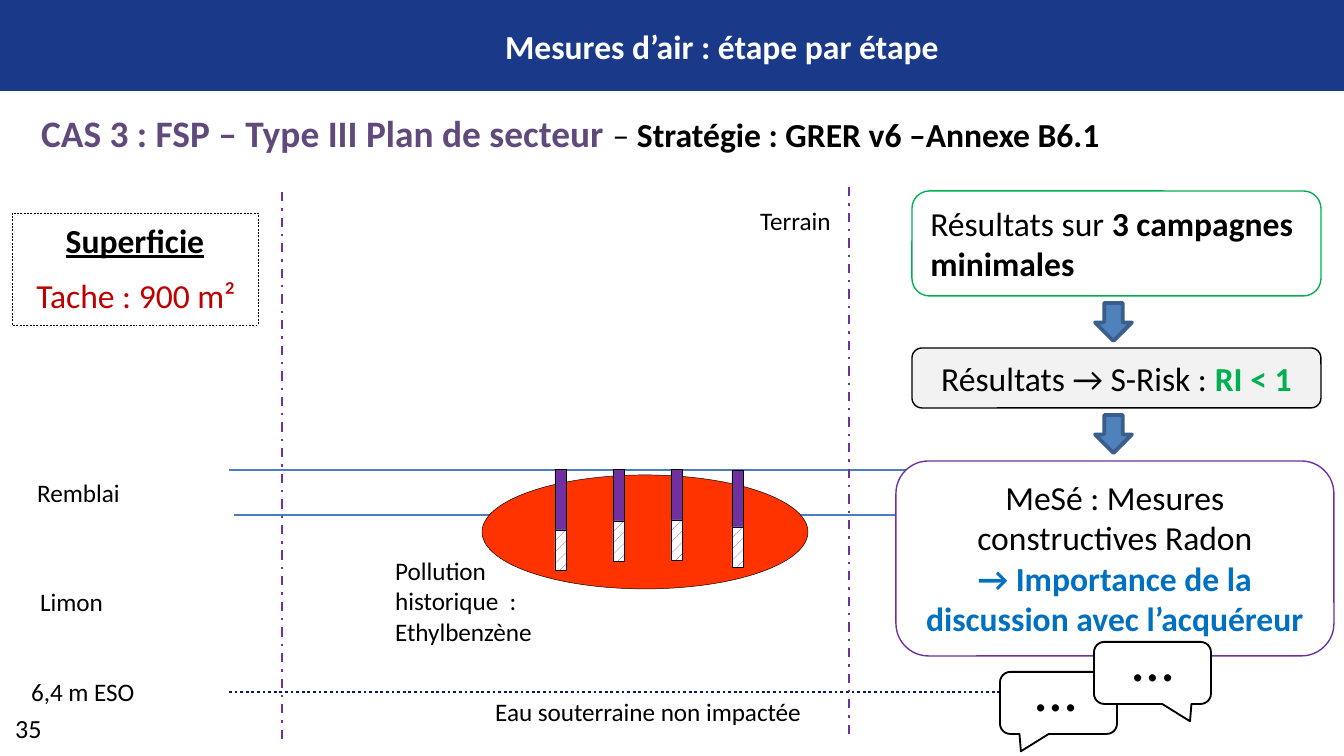
"""Build the air-measurement slide: site section on the left, decision flow on the right."""
import dataclasses

import lxml.etree
import pptx
import pptx.dml.color
import pptx.enum.dml
import pptx.enum.shapes
import pptx.enum.text
import pptx.oxml.ns
import pptx.util

SHAPE = pptx.enum.shapes.MSO_SHAPE
DASH = pptx.enum.dml.MSO_LINE
ALIGN = pptx.enum.text.PP_ALIGN
ANCHOR = pptx.enum.text.MSO_ANCHOR


@dataclasses.dataclass(frozen=True)
class Theme:
    font: str = "Calibri"
    black: str = "000000"
    white: str = "FFFFFF"
    grey: str = "F2F2F2"
    banner: str = "1A3989"
    heading: str = "604A7B"
    purple: str = "7030A0"
    layer: str = "4B7EBC"
    water: str = "002060"
    plume: str = "FF3300"
    green: str = "00B050"
    blue: str = "0070C0"
    red: str = "C00000"
    arrow: str = "4F81BD"
    arrow_edge: str = "3A5F8C"
    label: float = 13.5
    number: float = 14
    body: float = 18
    large: float = 20
    dots: float = 32


THEME = Theme()


@dataclasses.dataclass(frozen=True)
class Span:
    text: str
    color: str = THEME.black
    size: float = THEME.body
    bold: bool = False
    underline: bool = False


class SlideBuilder:
    def __init__(self, deck, theme, scale):
        self.theme = theme
        self.scale = scale
        self.page = deck.slides.add_slide(deck.slide_layouts[5])

    def emu(self, *lengths):
        return [pptx.util.Emu(round(length * self.scale)) for length in lengths]

    def rgb(self, color):
        return pptx.dml.color.RGBColor.from_string(color)

    def style(self, font, span):
        font.name = self.theme.font
        font.size = pptx.util.Pt(span.size)
        font.bold = span.bold
        font.underline = span.underline
        font.color.rgb = self.rgb(span.color)

    def fill_text(self, box, paragraphs, align=ALIGN.LEFT, anchor=ANCHOR.TOP, wrap=True):
        frame = box.text_frame
        frame.word_wrap = wrap
        frame.vertical_anchor = anchor
        for index, spans in enumerate(paragraphs):
            para = frame.add_paragraph() if index else frame.paragraphs[0]
            para.alignment = align
            for span in spans:
                run = para.add_run()
                run.text = span.text
                if len(spans) > 1:
                    self.style(run.font, span)
            if len(spans) == 1:
                self.style(para.font, spans[0])

    def title(self, bounds, span):
        box = self.page.shapes.title
        box.left, box.top, box.width, box.height = self.emu(*bounds)
        self.fill_text(box, [[span]], ALIGN.CENTER)

    def text(self, bounds, paragraphs, **layout):
        box = self.page.shapes.add_textbox(*self.emu(*bounds))
        self.fill_text(box, paragraphs, **layout)

    def label(self, bounds, *lines):
        self.text(bounds, [[Span(line, size=self.theme.label)] for line in lines])

    def shape(self, kind, bounds, fill=None, edge=None, weight=0.25, dash=None,
              hatch=None, adjust=()):
        box = self.page.shapes.add_shape(kind, *self.emu(*bounds))
        box.shadow.inherit = False
        if hatch:
            box.fill.patterned()
            box.fill.pattern = pptx.enum.dml.MSO_PATTERN.DASHED_UPWARD_DIAGONAL
            box.fill.fore_color.rgb = self.rgb(hatch)
            box.fill.back_color.rgb = self.rgb(self.theme.white)
        elif fill:
            box.fill.solid()
            box.fill.fore_color.rgb = self.rgb(fill)
        else:
            box.fill.background()
        if edge:
            box.line.color.rgb = self.rgb(edge)
            box.line.width = pptx.util.Pt(weight)
            box.line.dash_style = dash
        else:
            box.line.fill.background()
        for index, value in enumerate(adjust):
            box.adjustments[index] = value
        return box

    def banner(self, bounds):
        box = self.shape(SHAPE.RECTANGLE, bounds, self.theme.banner)
        self.page.shapes.element.insert(2, box.element)

    def line(self, start, end, color, weight, dash=None):
        line = self.page.shapes.add_connector(
            pptx.enum.shapes.MSO_CONNECTOR.STRAIGHT, *self.emu(*start, *end))
        line.line.color.rgb = self.rgb(color)
        line.line.width = pptx.util.Pt(weight)
        line.line.dash_style = dash
        lxml.etree.SubElement(line.element.spPr, pptx.oxml.ns.qn("a:effectLst"))

    def card(self, bounds, fill, edge, paragraphs, align=ALIGN.CENTER):
        box = self.shape(SHAPE.ROUNDED_RECTANGLE, bounds, fill, edge, 0.75)
        self.fill_text(box, paragraphs, align)

    def arrow(self, top):
        self.shape(SHAPE.DOWN_ARROW, (1095, top, 37, 38), self.theme.arrow,
                   self.theme.arrow_edge, 2)

    def bubble(self, left, top, tail, text_left):
        self.shape(SHAPE.ROUNDED_RECTANGULAR_CALLOUT, (left, top, 117, 62),
                   self.theme.white, self.theme.black, 1, adjust=(tail, 0.78, 0.167))
        self.text((text_left, top - 6, 113, 43), [[Span("…", size=self.theme.dots)]],
                  align=ALIGN.CENTER, anchor=ANCHOR.MIDDLE)

    def well(self, left, top, screen_top, casing):
        self.shape(SHAPE.RECTANGLE, (left, top, 11, casing), self.theme.purple,
                   self.theme.black)
        self.shape(SHAPE.RECTANGLE, (left, screen_top, 11, 40), edge=self.theme.black,
                   hatch=self.theme.purple)


def main():
    theme = THEME
    deck = pptx.Presentation()
    scale = pptx.util.Inches(10) / 1344
    deck.slide_width = pptx.util.Inches(10)
    deck.slide_height = pptx.util.Emu(round(756 * scale))
    slide = SlideBuilder(deck, theme, scale)

    slide.title((117, 19, 1210, 54),
                Span("Mesures d’air : étape par étape", theme.white, bold=True))
    slide.banner((0, 0, 1344, 91))
    slide.text((2, 706, 71, 46), [[Span("35", size=theme.number)]], wrap=False)
    slide.text((28, 104, 1211, 59), [[
        Span("CAS 3 : FSP – Type III Plan de secteur ", theme.heading, theme.large, True),
        Span("– "),
        Span("Stratégie : GRER v6 –Annexe B6.1", bold=True)]])

    for left, right, level in ((229, 991, 470), (234, 1003, 515)):
        slide.line((left, level), (right, level), theme.layer, 0.75)
    slide.line((229, 692), (999, 692), theme.water, 1.5, DASH.ROUND_DOT)
    for across, top in ((282, 192), (849, 187)):
        slide.line((across, top), (across, top + 548), theme.purple, 1.25, DASH.DASH_DOT)

    slide.label((747, 199, 142, 44), "Terrain")
    slide.label((24, 471, 142, 44), "Remblai")
    slide.label((27, 580, 247, 44), "Limon")
    slide.label((18, 670, 142, 44), "6,4 m ESO")
    slide.label((382, 549, 187, 105), "Pollution historique  :", "Ethylbenzène")
    slide.label((482, 690, 379, 44), "Eau souterraine non impactée")
    slide.shape(SHAPE.OVAL, (482, 475, 326, 114), theme.plume, theme.black)

    slide.card((912, 348, 409, 60), theme.grey, theme.black, [[
        Span("Résultats → S-Risk : "), Span("RI < 1", theme.green, bold=True)]])
    slide.card((912, 191, 409, 105), theme.white, theme.green, [[
        Span("Résultats sur "), Span("3 campagnes minimales", bold=True)]], ALIGN.LEFT)
    slide.card((896, 461, 438, 195), theme.white, theme.purple, [
        [Span("MeSé : Mesures constructives Radon")],
        [Span("→ Importance de la discussion avec l’acquéreur", theme.blue, bold=True)]])
    for top in (303, 415):
        slide.arrow(top)
    slide.bubble(1000, 672, -0.321, 1000)
    slide.bubble(1094, 642, 0.321, 1097)

    spot = slide.shape(SHAPE.ROUNDED_RECTANGLE, (3, 265, 266, 60))
    slide.fill_text(spot, [[Span("Tache : 900 m²", theme.red)]], ALIGN.CENTER)
    area = slide.shape(SHAPE.RECTANGLE, (12, 213, 246, 112), edge=theme.black,
                       dash=DASH.DASH)
    slide.fill_text(area, [[Span("Superficie", bold=True, underline=True)]], ALIGN.CENTER)

    for well in ((555, 469, 530, 63), (613, 469, 521, 52),
                 (671, 469, 520, 52), (732, 470, 527, 58)):
        slide.well(*well)

    deck.save("out.pptx")


if __name__ == "__main__":
    main()
